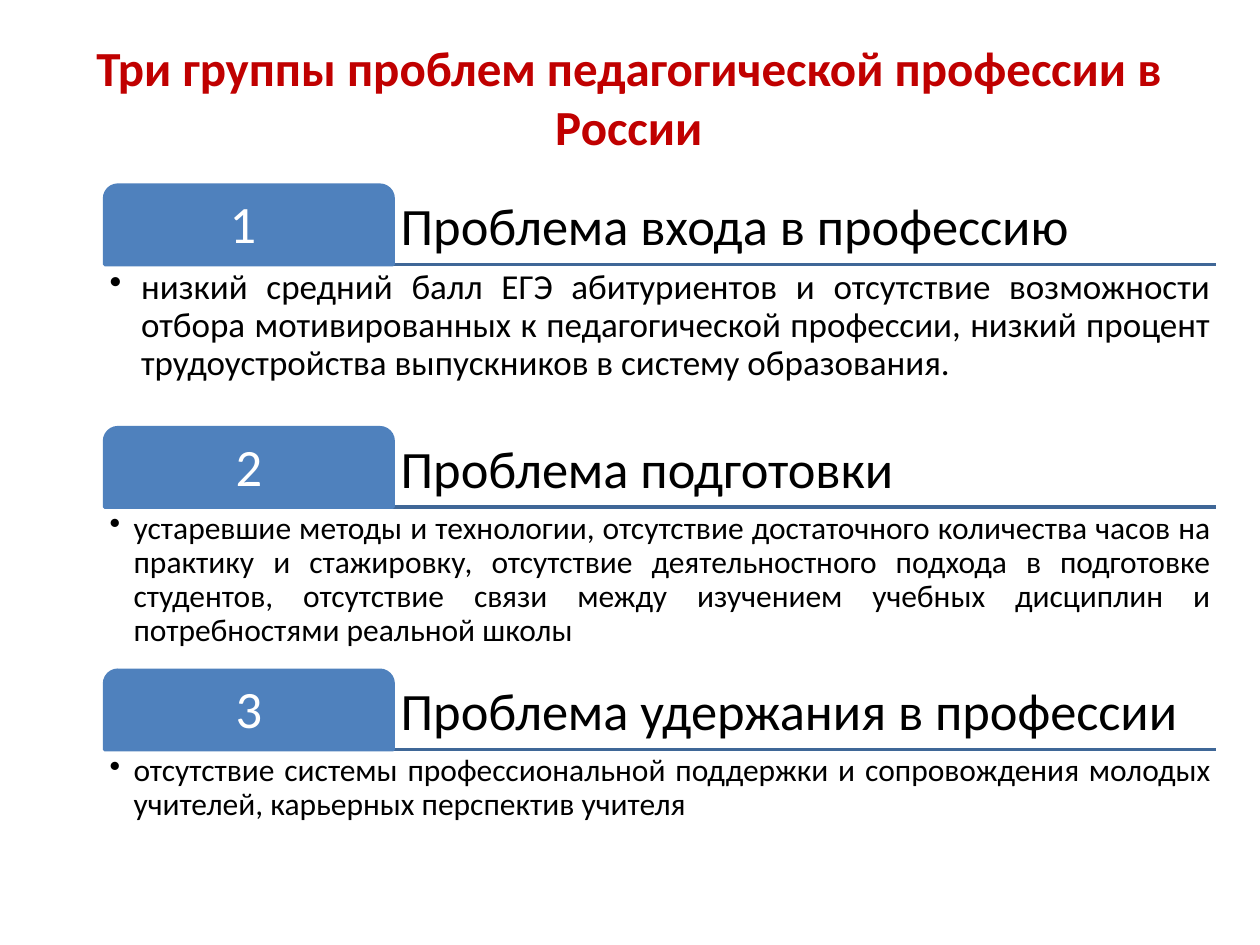
from lxml import etree
from pptx import Presentation
from pptx import util as u
from pptx.dml.color import RGBColor
from pptx.enum import shapes, text
from pptx.oxml import ns

RED = RGBColor(0xC0, 0x00, 0x00)
BLUE = RGBColor(0x4F, 0x81, 0xBD)
DARK_BLUE = RGBColor(0x3F, 0x67, 0x97)
BLACK = RGBColor(0, 0, 0)
WHITE = RGBColor(0xFF, 0xFF, 0xFF)

LEFT, TAB_WIDTH, WIDTH = 0.83, 2.29, 8.82
TOP, TAB_HEIGHT, BODY_HEIGHT, ROW_PITCH = 1.47, 0.63, 1.26, 1.925

# number, heading, details, details size, hanging indent
PROBLEMS = [
    ("1 ", "Проблема входа в профессию",
     "низкий средний балл ЕГЭ абитуриентов и отсутствие возможности отбора "
     "мотивированных к педагогической профессии, низкий процент "
     "трудоустройства выпускников в систему образования.", 20, 0.25),
    ("2", "Проблема подготовки",
     "устаревшие методы и технологии, отсутствие достаточного количества часов "
     "на практику и стажировку, отсутствие деятельностного подхода в подготовке "
     "студентов, отсутствие связи между изучением учебных дисциплин и "
     "потребностями реальной школы", 18, 0.19),
    ("3", "Проблема удержания в профессии",
     "отсутствие системы профессиональной поддержки и сопровождения молодых "
     "учителей, карьерных перспектив учителя", 18, 0.19),
]


def write(shape, words, size, color, align, anchor, inset, spacing=0.9):
    """Fill the shape with one paragraph of one run and return the paragraph."""
    frame = shape.text_frame
    frame.word_wrap = True
    frame.vertical_anchor = anchor
    frame.margin_left = frame.margin_right = u.Inches(inset)
    frame.margin_top = frame.margin_bottom = u.Inches(min(inset, 0.06))
    paragraph = frame.paragraphs[0]
    paragraph.alignment = align
    paragraph.line_spacing = spacing
    run = paragraph.add_run()
    run.text = words
    run.font.name = "Calibri"
    run.font.size = u.Pt(size)
    run.font.color.rgb = color
    return paragraph


def box(left, top, width, height):
    return [u.Inches(length) for length in (left, top, width, height)]


presentation = Presentation()
presentation.slide_width = u.Inches(10)
presentation.slide_height = u.Inches(7.5)
slide = presentation.slides.add_slide(presentation.slide_layouts[6])

title = slide.shapes.add_textbox(*box(0.49, 0.3, 9, 0.93))
paragraph = write(title, "Три группы проблем педагогической профессии в России", 28, RED,
                  text.PP_ALIGN.CENTER, text.MSO_ANCHOR.MIDDLE, 0.1, 1.0)
paragraph.runs[0].font.bold = True

for row, (number, heading, details, size, indent) in enumerate(PROBLEMS):
    top = TOP + row * ROW_PITCH
    base = top + TAB_HEIGHT

    rule = slide.shapes.add_connector(
        shapes.MSO_CONNECTOR.STRAIGHT, *box(LEFT, base, LEFT + WIDTH, base))
    rule.line.color.rgb = DARK_BLUE
    rule.line.width = u.Pt(2)
    etree.SubElement(rule._element.spPr, ns.qn("a:effectLst"))

    heading_box = slide.shapes.add_textbox(
        *box(LEFT + TAB_WIDTH, top, WIDTH - TAB_WIDTH, TAB_HEIGHT))
    write(heading_box, heading, 30, BLACK,
          text.PP_ALIGN.LEFT, text.MSO_ANCHOR.BOTTOM, 0.06)

    tab = slide.shapes.add_shape(
        shapes.MSO_SHAPE.ROUND_2_SAME_RECTANGLE, *box(LEFT, top, TAB_WIDTH, TAB_HEIGHT))
    tab.shadow.inherit = False
    tab.fill.solid()
    tab.fill.fore_color.rgb = BLUE
    tab.line.color.rgb = BLUE
    tab.line.width = u.Pt(2)
    write(tab, number, 30, WHITE, text.PP_ALIGN.CENTER, text.MSO_ANCHOR.MIDDLE, 0.06)

    body = slide.shapes.add_textbox(*box(LEFT, base, WIDTH, BODY_HEIGHT))
    paragraph = write(body, details, size, BLACK,
                      text.PP_ALIGN.JUSTIFY, text.MSO_ANCHOR.TOP, 0.04)
    properties = paragraph._p.get_or_add_pPr()
    properties.set("marL", str(u.Inches(indent)))
    properties.set("indent", str(-u.Inches(indent)))
    etree.SubElement(properties, ns.qn("a:buChar"), char="•")

presentation.save("out.pptx")
